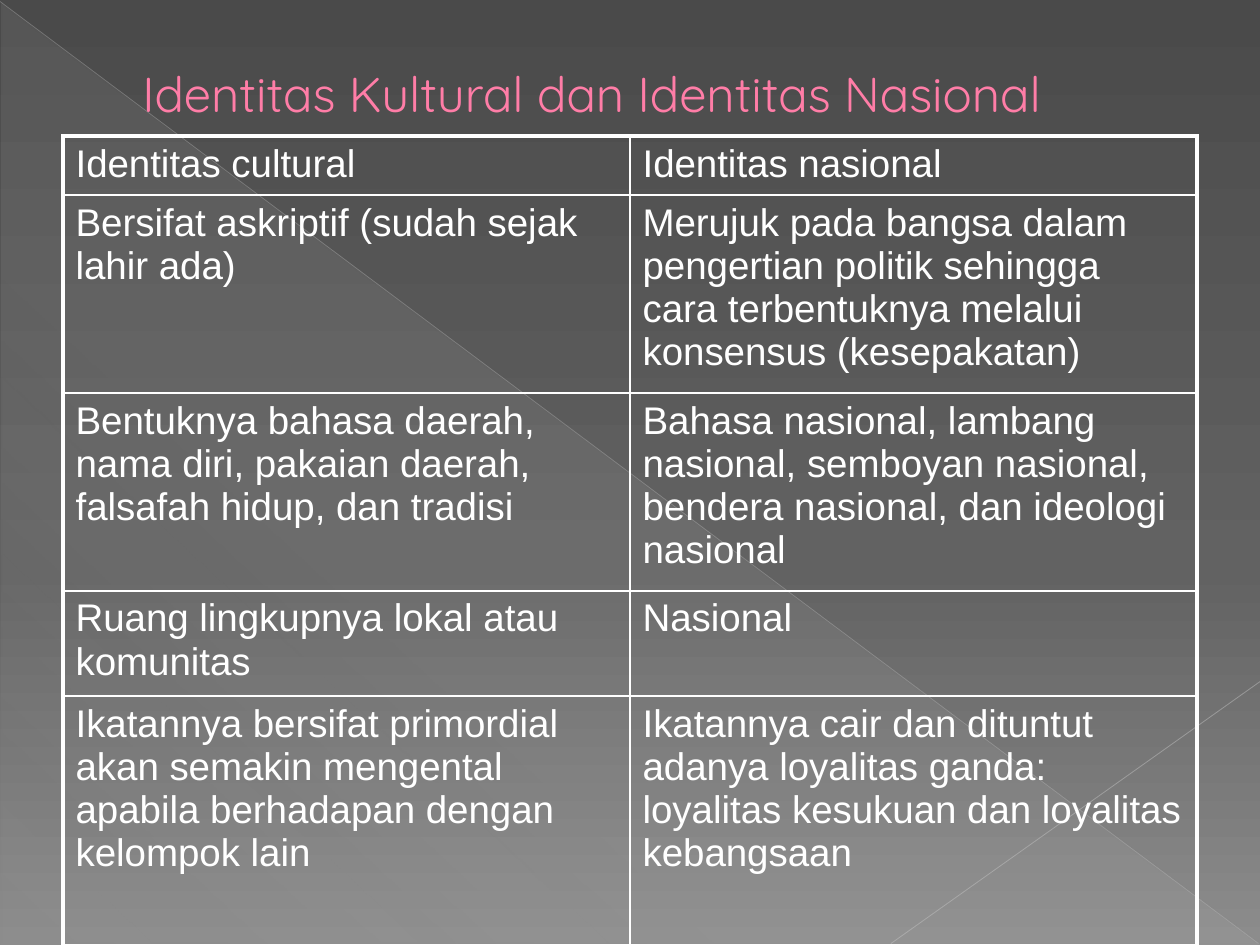
from dataclasses import dataclass

from lxml import etree
from pptx import Presentation
from pptx.dml.color import RGBColor
from pptx.enum.shapes import MSO_CONNECTOR, MSO_SHAPE
from pptx.enum.text import MSO_ANCHOR
from pptx.oxml.ns import qn
from pptx.util import Cm, Pt

STRAIGHT = MSO_CONNECTOR.STRAIGHT
RIGHT_TRIANGLE = MSO_SHAPE.RIGHT_TRIANGLE
MIDDLE = MSO_ANCHOR.MIDDLE
BLANK_LAYOUT = 6


@dataclass(frozen=True)
class Theme:
    title_font: str = "Quicksand"
    body_font: str = "Arial"
    title_size: float = 28
    body_size: float = 22
    title: str = "FF7DA7"
    title_outline: str = "B12761"
    body: str = "FFFFFF"
    border: str = "FFFFFF"
    outer_border: float = 2.25
    inner_border: float = 1


@dataclass(frozen=True)
class Stop:
    position: int
    color: str
    opacity: int = 100


@dataclass(frozen=True)
class Ray:
    """A thin translucent background line, in centimetres."""
    start: tuple[float, float]
    end: tuple[float, float]
    color: str
    width: float
    opacity: int


THEME = Theme()
BACKDROP = (Stop(0, "4A4A4A"), Stop(60, "626262"), Stop(100, "8C8C8C"))
SHEEN = (Stop(0, "D2D2D2", 10), Stop(70, "D2D2D2", 8), Stop(100, "D2D2D2", 1))
RAYS = (
    Ray((0, 0.03), (25.37, 19.02), "BFBFBF", 0.39, 35),
    Ray((25.4, 13.74), (17.96, 19.02), "C6C6C6", 0.47, 45),
)
TITLE = "Identitas Kultural dan Identitas Nasional"
COMPARISON = (
    ("Identitas cultural", "Identitas nasional"),
    ("Bersifat askriptif (sudah sejak lahir ada)",
     "Merujuk pada bangsa dalam pengertian politik sehingga cara terbentuknya "
     "melalui konsensus (kesepakatan)"),
    ("Bentuknya bahasa daerah, nama diri, pakaian daerah, falsafah hidup, dan tradisi",
     "Bahasa nasional, lambang nasional, semboyan nasional, bendera nasional, "
     "dan ideologi nasional"),
    ("Ruang lingkupnya lokal atau komunitas", "Nasional"),
    ("Ikatannya bersifat primordial akan semakin mengental apabila berhadapan "
     "dengan kelompok lain",
     "Ikatannya cair dan dituntut adanya loyalitas ganda: loyalitas kesukuan "
     "dan loyalitas kebangsaan"),
)
ROW_HEIGHTS = (1.19, 3.99, 3.99, 2.11, 5.03)
COLUMN_WIDTH = 11.43


def add_color(parent, color: str, opacity: int = 100) -> None:
    rgb = etree.SubElement(parent, qn("a:srgbClr"), val=color)
    if opacity < 100:
        etree.SubElement(rgb, qn("a:alpha"), val=str(opacity * 1000))


def set_gradient(fill, owner, stops: tuple[Stop, ...], angle: int) -> None:
    """Fill with the stops; the angle runs clockwise in degrees."""
    fill.gradient()
    gradient = owner.find(".//" + qn("a:gradFill"))
    for child in list(gradient):
        gradient.remove(child)
    stop_list = etree.SubElement(gradient, qn("a:gsLst"))
    for stop in stops:
        entry = etree.SubElement(stop_list, qn("a:gs"), pos=str(stop.position * 1000))
        add_color(entry, stop.color, stop.opacity)
    etree.SubElement(gradient, qn("a:lin"), ang=str(angle * 60000), scaled="0")


def add_line_xml(parent, tag: str, color: str, width: float, opacity: int = 100):
    line = etree.SubElement(parent, qn(tag), w=str(Pt(width)))
    add_color(etree.SubElement(line, qn("a:solidFill")), color, opacity)
    return line


def style_run(run, font: str, size: float, color: str) -> None:
    run.font.name = font
    run.font.size = Pt(size)
    run.font.color.rgb = RGBColor.from_string(color)


def draw_backdrop(slide) -> None:
    set_gradient(slide.background.fill, slide.element, BACKDROP, 90)
    sheen = slide.shapes.add_shape(RIGHT_TRIANGLE, Cm(0.03), Cm(0.05), Cm(25.37), Cm(19))
    sheen.shadow.inherit = False
    sheen.line.fill.background()
    set_gradient(sheen.fill, sheen.element, SHEEN, 133)
    for ray in RAYS:
        draw_ray(slide, ray)


def draw_ray(slide, ray: Ray) -> None:
    points = [Cm(length) for length in ray.start + ray.end]
    properties = slide.shapes.add_connector(STRAIGHT, *points).element.spPr
    add_line_xml(properties, "a:ln", ray.color, ray.width, ray.opacity)
    etree.SubElement(properties, qn("a:effectLst"))


def draw_title(slide) -> None:
    frame = slide.shapes.add_textbox(Cm(1.27), Cm(0.76), Cm(22.86), Cm(2.21)).text_frame
    frame.word_wrap = True
    frame.vertical_anchor = MIDDLE
    frame.text = TITLE
    paragraph = frame.paragraphs[0]
    paragraph._p.get_or_add_pPr().set("marL", str(Cm(1.35)))
    run = paragraph.runs[0]
    style_run(run, THEME.title_font, THEME.title_size, THEME.title)
    properties = run.font._element
    outline = add_line_xml(properties, "a:ln", THEME.title_outline, 0.5)
    properties.insert(0, outline)


def draw_cell(cell, text: str, outer_sides: dict[str, bool]) -> None:
    """Write one cell; outer_sides tells which borders lie on the table's edge."""
    cell.text = text
    paragraph = cell.text_frame.paragraphs[0]
    spacing = etree.SubElement(paragraph._p.get_or_add_pPr(), qn("a:spcBef"))
    etree.SubElement(spacing, qn("a:spcPct"), val="20000")
    style_run(paragraph.runs[0], THEME.body_font, THEME.body_size, THEME.body)
    properties = cell._tc.get_or_add_tcPr()
    for side, is_outer in outer_sides.items():
        width = THEME.outer_border if is_outer else THEME.inner_border
        add_line_xml(properties, f"a:ln{side}", THEME.border, width)
    cell.fill.background()


def draw_comparison(slide) -> None:
    row_count, column_count = len(COMPARISON), len(COMPARISON[0])
    table = slide.shapes.add_table(
        row_count, column_count, Cm(1.27), Cm(2.74),
        Cm(COLUMN_WIDTH * column_count), Cm(sum(ROW_HEIGHTS))).table
    table.first_row = False
    table.horz_banding = False
    for column in table.columns:
        column.width = Cm(COLUMN_WIDTH)
    for r, (texts, height) in enumerate(zip(COMPARISON, ROW_HEIGHTS)):
        table.rows[r].height = Cm(height)
        for c, text in enumerate(texts):
            outer_sides = {"L": c == 0, "R": c == column_count - 1,
                           "T": r == 0, "B": r == row_count - 1}
            draw_cell(table.cell(r, c), text, outer_sides)


def main() -> None:
    presentation = Presentation()
    presentation.slide_width = Cm(25.4)
    presentation.slide_height = Cm(19.05)
    slide = presentation.slides.add_slide(presentation.slide_layouts[BLANK_LAYOUT])
    draw_backdrop(slide)
    draw_title(slide)
    draw_comparison(slide)
    presentation.save("out.pptx")


if __name__ == "__main__":
    main()
